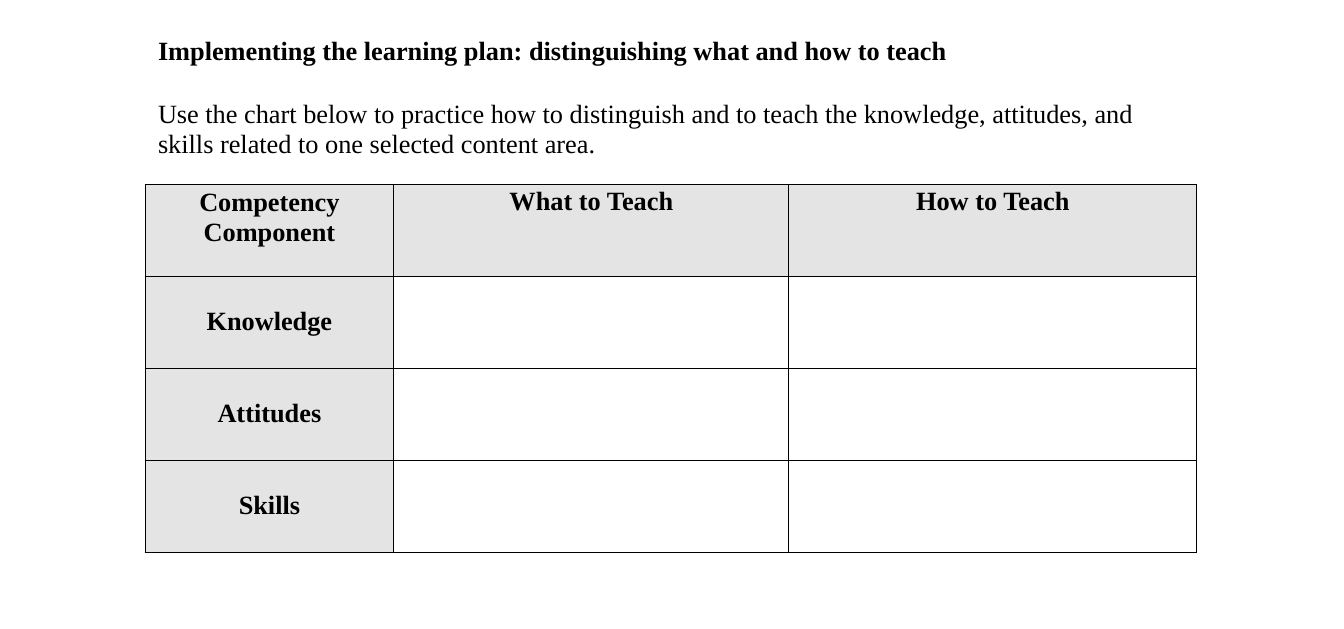
import pptx
import pptx.dml.color
import pptx.enum.text
import pptx.oxml.ns
import pptx.util
from lxml import etree

PX = 5784  # EMU in one px
BLACK = pptx.dml.color.RGBColor(0x00, 0x00, 0x00)
GREY = pptx.dml.color.RGBColor(0xE4, 0xE4, 0xE4)
FONT = {"name": "Times New Roman", "size": pptx.util.Pt(12)}
CENTER = pptx.enum.text.PP_ALIGN.CENTER

TITLE = "Implementing the learning plan: distinguishing what and how to teach"
INTRO = ("Use the chart below to practice how to distinguish and to teach the "
         "knowledge, attitudes, and skills related to one selected content area.")
HEADERS = ["Competency Component", "What to Teach", "How to Teach"]
COMPONENTS = ["Knowledge", "Attitudes", "Skills"]
COLUMNS = [249, 395, 408]
ROW = 92


def px(n):
    return pptx.util.Emu(n * PX)


def set_all(obj, values):
    for name, value in values.items():
        setattr(obj, name, value)


def write(p, text, bold):
    r = p.add_run()
    r.text = text
    set_all(r.font, {**FONT, "bold": bold})
    r.font.color.rgb = BLACK


def add_intro(s, x, y, w, h):
    tf = s.shapes.add_textbox(px(x), px(y), px(w), px(h)).text_frame
    set_all(tf, {"word_wrap": True, "margin_left": 0, "margin_right": 0,
                 "margin_top": px(4), "margin_bottom": 0})
    write(tf.paragraphs[0], TITLE, True)
    p = tf.add_paragraph()
    set_all(p, {"space_before": pptx.util.Pt(15),
                "line_spacing": pptx.util.Pt(13.8)})
    write(p, INTRO, False)


def add_borders(cell):
    tc_pr = cell._tc.get_or_add_tcPr()
    qn = pptx.oxml.ns.qn
    for side in ("a:lnL", "a:lnR", "a:lnT", "a:lnB"):
        ln = etree.SubElement(tc_pr, qn(side), w=str(pptx.util.Pt(0.5)))
        fill = etree.SubElement(ln, qn("a:solidFill"))
        etree.SubElement(fill, qn("a:srgbClr"), val=str(BLACK))


def format_cell(cell, text, top, shaded):
    set_all(cell, {"margin_left": 0, "margin_right": 0,
                   "margin_top": px(top), "margin_bottom": 0})
    add_borders(cell)
    if shaded:
        cell.fill.solid()
        cell.fill.fore_color.rgb = GREY
    else:
        cell.fill.background()
    if text:
        p = cell.text_frame.paragraphs[0]
        set_all(p, {"alignment": CENTER, "line_spacing": pptx.util.Pt(13.8)})
        write(p, text, True)


def add_grid(s, x, y):
    rows = [HEADERS] + [[name, "", ""] for name in COMPONENTS]
    table = s.shapes.add_table(len(rows), len(COLUMNS), px(x), px(y),
                               px(sum(COLUMNS)), px(ROW * len(rows))).table
    set_all(table, {"first_row": False, "horz_banding": False})
    for column, width in zip(table.columns, COLUMNS):
        column.width = px(width)
    for i, texts in enumerate(rows):
        table.rows[i].height = px(ROW)
        for j, text in enumerate(texts):
            top = 29 if i else 2 if j == 0 else 1
            format_cell(table.cell(i, j), text, top, i == 0 or j == 0)


def main():
    prs = pptx.Presentation()
    set_all(prs, {"slide_width": px(1344), "slide_height": px(629)})
    s = prs.slides.add_slide(prs.slide_layouts[6])

    # Title and instructions
    add_intro(s, 158, 30, 982, 127)

    # Table to fill in
    add_grid(s, 145, 185)

    prs.save("out.pptx")


if __name__ == "__main__":
    main()
